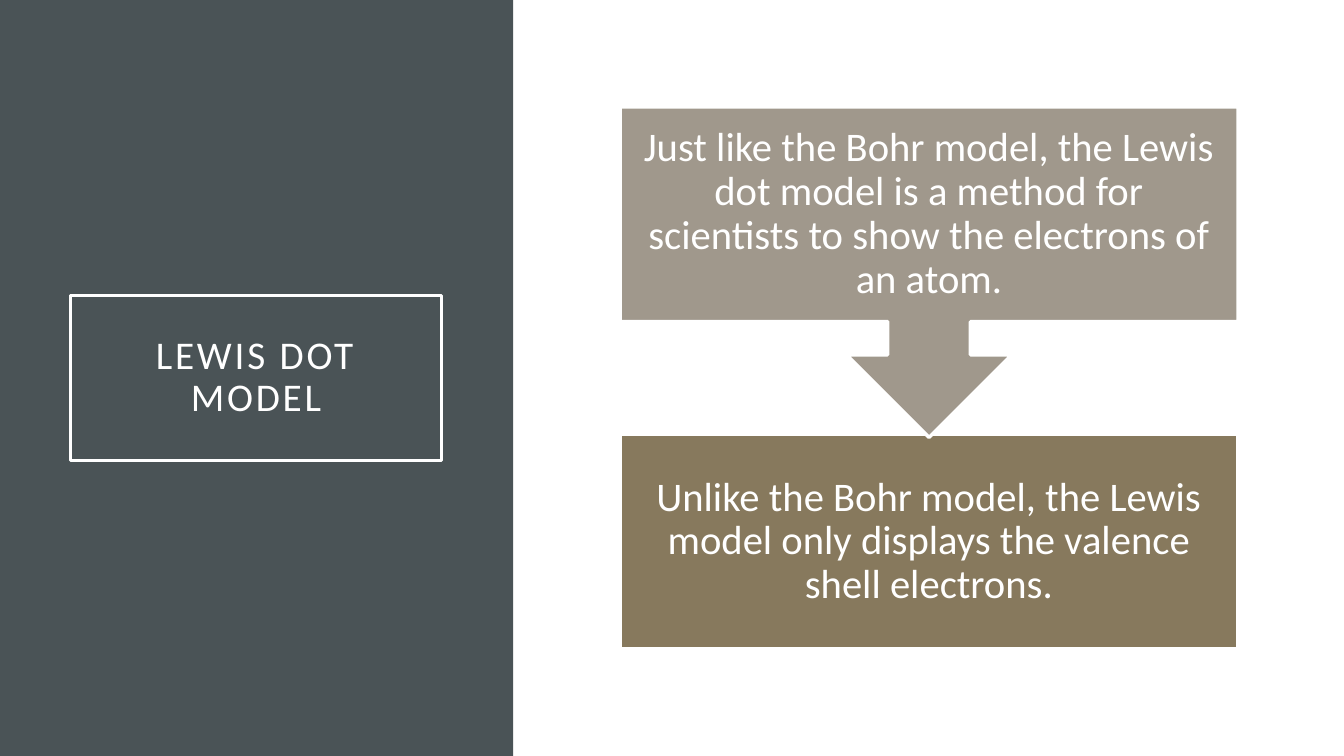
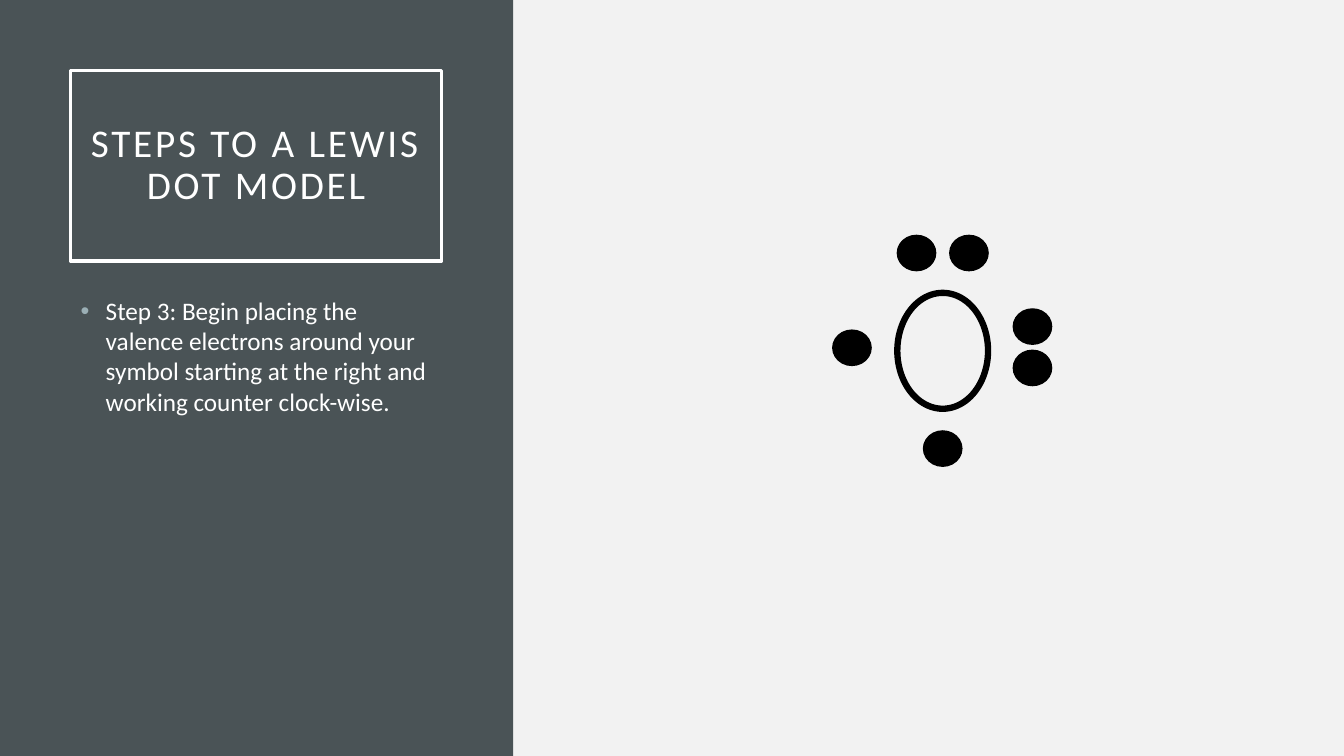
import pptx
import pptx.dml.color
import pptx.enum.shapes
import pptx.enum.text
import pptx.oxml
import pptx.oxml.ns
import pptx.util

Inches = pptx.util.Inches
Pt = pptx.util.Pt
RGBColor = pptx.dml.color.RGBColor
Shape = pptx.enum.shapes.MSO_SHAPE
Align = pptx.enum.text.PP_ALIGN
Anchor = pptx.enum.text.MSO_ANCHOR

WHITE = RGBColor(0xFF, 0xFF, 0xFF)
LIGHT_GREY = RGBColor(0xF2, 0xF2, 0xF2)
SLATE = RGBColor(0x4A, 0x53, 0x56)
BULLET_BLUE = RGBColor(0x9B, 0xAF, 0xB5)
TAUPE = RGBColor(0xA0, 0x98, 0x8C)
OLIVE = RGBColor(0x87, 0x79, 0x5D)
BLACK = RGBColor(0, 0, 0)

FONT = "Calibri"
SLIDE_W, SLIDE_H = 13.33, 7.5
PANEL_W = 5.09
MARGIN, COLUMN_W = 0.7, 3.68


def write_text(shape, text, size, color=WHITE, align=Align.CENTER,
               anchor=Anchor.MIDDLE, inset=None, line_spacing=None,
               space_before=0, tracking=None, bullet_color=None):
    """Put one formatted paragraph into a shape."""
    frame = shape.text_frame
    frame.word_wrap = True
    frame.auto_size = pptx.enum.text.MSO_AUTO_SIZE.NONE
    frame.vertical_anchor = anchor
    if inset is not None:
        frame.margin_left = frame.margin_right = Inches(inset)
        frame.margin_top = frame.margin_bottom = Inches(inset)
    paragraph = frame.paragraphs[0]
    paragraph.alignment = align
    paragraph.space_before = Pt(space_before)
    if line_spacing:
        paragraph.line_spacing = line_spacing
    run = paragraph.add_run()
    run.text = text
    run.font.name = FONT
    run.font.size = Pt(size)
    run.font.color.rgb = color
    if tracking:
        run.font._element.set("spc", str(tracking * 100))
    if bullet_color is not None:
        add_bullet(paragraph, bullet_color)


def add_bullet(paragraph, color, indent=0.25):
    """Give a paragraph a coloured bullet with a hanging indent."""
    properties = paragraph._p.get_or_add_pPr()
    properties.set("marL", str(Inches(indent)))
    properties.set("indent", str(-Inches(indent)))
    namespace = pptx.oxml.ns.nsdecls("a")
    for xml in (f'<a:buClr {namespace}><a:srgbClr val="{color}"/></a:buClr>',
                f'<a:buFont {namespace} typeface="Arial"/>',
                f'<a:buChar {namespace} char="•"/>'):
        properties.append(pptx.oxml.parse_xml(xml))


def draw_shape(slide, kind, left, top, width, height,
               fill=None, line=None, line_width=1):
    """Draw a preset shape without a shadow."""
    shape = slide.shapes.add_shape(
        kind, Inches(left), Inches(top), Inches(width), Inches(height))
    shape.shadow.inherit = False
    if fill is None:
        shape.fill.background()
    else:
        shape.fill.solid()
        shape.fill.fore_color.rgb = fill
    if line is None:
        shape.line.fill.background()
    else:
        shape.line.color.rgb = line
        shape.line.width = Pt(line_width)
    return shape


def add_panel_slide(deck, title_text, title_top, title_height, background):
    """Start a slide with the dark left panel and the framed title."""
    slide = deck.slides.add_slide(deck.slide_layouts[5])
    slide.background.fill.solid()
    slide.background.fill.fore_color.rgb = background

    title = slide.shapes.title
    title.left, title.top = Inches(MARGIN), Inches(title_top)
    title.width, title.height = Inches(COLUMN_W), Inches(title_height)
    title.line.color.rgb = WHITE
    title.line.width = Pt(2.5)
    write_text(title, title_text, 28, inset=0.2, line_spacing=0.9, tracking=2)

    # The panel lies behind the title
    panel = draw_shape(slide, Shape.RECTANGLE, 0, 0, PANEL_W, SLIDE_H, fill=SLATE)
    title.element.addprevious(panel.element)
    return slide


def draw_comparison(slide, left, top, width, similarity, difference):
    """Stack a callout that points down to a second box."""
    callout_height, box_height, box_offset = 3.28, 2.13, 3.25
    steps = (
        (Shape.RECTANGLE, top + box_offset, box_height, OLIVE, difference),
        (Shape.DOWN_ARROW_CALLOUT, top, callout_height, TAUPE, similarity),
    )
    for kind, step_top, height, fill, text in steps:
        step = draw_shape(slide, kind, left, step_top, width, height,
                          fill=fill, line=WHITE, line_width=2.5)
        write_text(step, text, 29, inset=0.23, line_spacing=0.9)


def draw_step_text(slide, left, top, width, height, text):
    """Write the bulleted step under the title."""
    step = slide.shapes.add_textbox(
        Inches(left), Inches(top), Inches(width), Inches(height))
    write_text(step, text, 18, align=Align.LEFT, anchor=Anchor.TOP,
               space_before=10, bullet_color=BULLET_BLUE)


def draw_lewis_dots(slide, center_x, center_y):
    """Draw the symbol ring and its valence electrons around a centre."""
    ring_w, ring_h = 0.9, 1.15
    dot_w, dot_h = 0.38, 0.35
    draw_shape(slide, Shape.OVAL, center_x - ring_w / 2, center_y - ring_h / 2,
               ring_w, ring_h, line=BLACK, line_width=4.5)
    electrons = (
        (0.89, 0.17), (0.89, -0.24),    # right pair
        (0.26, -0.97), (-0.26, -0.97),  # top pair
        (-0.9, -0.03),                  # left
        (0, 0.97),                      # bottom
    )
    for dx, dy in electrons:
        draw_shape(slide, Shape.OVAL, center_x + dx - dot_w / 2,
                   center_y + dy - dot_h / 2, dot_w, dot_h,
                   fill=BLACK, line=BLACK)


def build_model_slide(deck):
    slide = add_panel_slide(deck, "LEWIS DOT MODEL", 2.93, 1.64, WHITE)
    draw_comparison(
        slide, 6.15, 1.06, 6.13,
        "Just like the Bohr model, the Lewis dot model is a method for "
        "scientists to show the electrons of an atom.",
        "Unlike the Bohr model, the Lewis model only displays the valence "
        "shell electrons.")


def build_steps_slide(deck):
    slide = add_panel_slide(deck, "STEPS TO A LEWIS DOT MODEL",
                            MARGIN, 1.89, LIGHT_GREY)
    draw_step_text(
        slide, MARGIN, 2.88, COLUMN_W, 3.74,
        "Step 3: Begin placing the valence electrons around your symbol "
        "starting at the right and working counter clock-wise.")
    draw_lewis_dots(slide, 9.35, 3.48)


def main():
    deck = pptx.Presentation()
    deck.slide_width, deck.slide_height = Inches(SLIDE_W), Inches(SLIDE_H)
    build_model_slide(deck)
    build_steps_slide(deck)
    deck.save("out.pptx")


if __name__ == "__main__":
    main()
